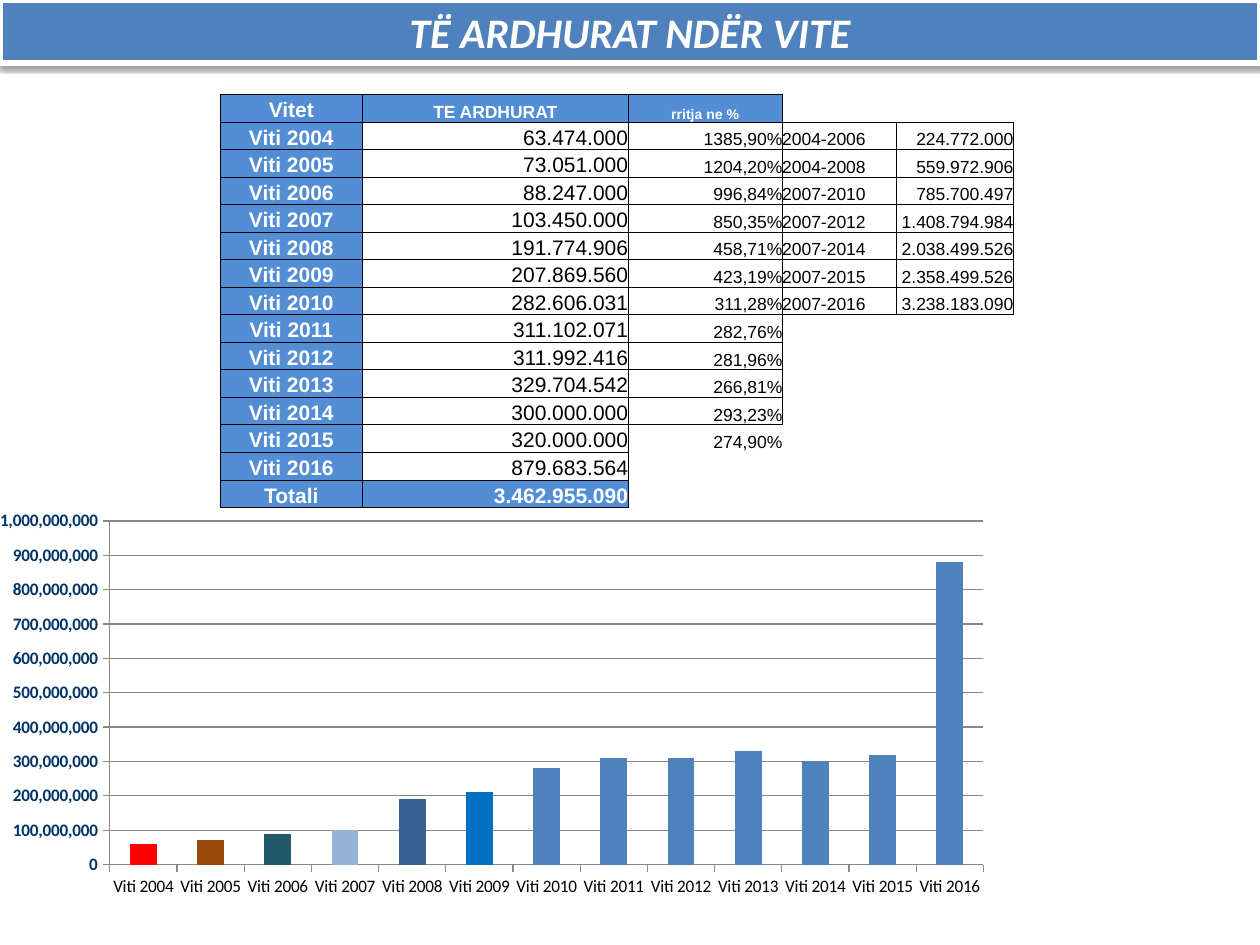
import dataclasses

import lxml.etree
import pptx
import pptx.chart.data
import pptx.dml.color
import pptx.enum.chart
import pptx.enum.text
import pptx.oxml
import pptx.oxml.ns
import pptx.util

Pt = pptx.util.Pt
ALIGN = pptx.enum.text.PP_ALIGN
ANCHOR = pptx.enum.text.MSO_ANCHOR
NAMESPACES = pptx.oxml.ns.nsdecls("a")


@dataclasses.dataclass(frozen=True)
class Theme:
    white: str = "FFFFFF"
    black: str = "000000"
    banner: str = "4F81BD"
    heading: str = "538ED5"
    scale: str = "003366"
    grid: str = "878787"
    bar_colors: tuple = ("FF0000", "984807", "215968", "95B3D7", "376092", "0070C0")
    title_font: str = "Calibri"
    table_font: str = "Arial"
    title_size: int = 24
    large: int = 12
    medium: int = 10
    small: int = 8


REVENUES = {
    "Viti 2004": "63.474.000", "Viti 2005": "73.051.000", "Viti 2006": "88.247.000",
    "Viti 2007": "103.450.000", "Viti 2008": "191.774.906", "Viti 2009": "207.869.560",
    "Viti 2010": "282.606.031", "Viti 2011": "311.102.071", "Viti 2012": "311.992.416",
    "Viti 2013": "329.704.542", "Viti 2014": "300.000.000", "Viti 2015": "320.000.000",
    "Viti 2016": "879.683.564",
}
GROWTH = ["1385,90%", "1204,20%", "996,84%", "850,35%", "458,71%", "423,19%",
          "311,28%", "282,76%", "281,96%", "266,81%", "293,23%", "274,90%"]
PERIODS = [
    ("2004-2006", "224.772.000"), ("2004-2008", "559.972.906"),
    ("2007-2010", "785.700.497"), ("2007-2012", "1.408.794.984"),
    ("2007-2014", "2.038.499.526"), ("2007-2015", "2.358.499.526"),
    ("2007-2016", "3.238.183.090"),
]
UNFRAMED = "274,90%"


def table_rows():
    rows = [["Vitet", "TE ARDHURAT", "rritja ne %", "", ""]]
    for index, (year, revenue) in enumerate(REVENUES.items()):
        growth = GROWTH[index] if index < len(GROWTH) else ""
        period = PERIODS[index] if index < len(PERIODS) else ("", "")
        rows.append([year, revenue, growth, *period])
    return rows + [["Totali", "3.462.955.090", "", "", ""]]


class SlideBuilder:
    """Holds the theme and the current slide and adds each kind of element."""

    def __init__(self, slide, theme):
        self.slide = slide
        self.theme = theme

    def color(self, value):
        return pptx.dml.color.RGBColor.from_string(value)

    def style(self, font, name, size, color, bold=False, italic=False):
        font.name, font.size = name, Pt(size)
        font.bold, font.italic = bold, italic
        font.color.rgb = self.color(color)

    def title(self, text, left, top, width, height):
        theme, shape = self.theme, self.slide.shapes.title
        shape.left, shape.top, shape.width, shape.height = map(Pt, (left, top, width, height))
        shape.fill.solid()
        shape.fill.fore_color.rgb = self.color(theme.banner)
        shape.line.color.rgb = self.color(theme.white)
        shape.line.width = Pt(3)
        shape._element.spPr.append(pptx.oxml.parse_xml(
            f'<a:effectLst {NAMESPACES}><a:outerShdw blurRad="{Pt(3.1)}" dist="{Pt(1.6)}" '
            f'dir="5400000" rotWithShape="0"><a:srgbClr val="{theme.black}">'
            '<a:alpha val="38000"/></a:srgbClr></a:outerShdw></a:effectLst>'))
        frame = shape.text_frame
        frame.text = text
        frame.auto_size = pptx.enum.text.MSO_AUTO_SIZE.NONE
        frame.vertical_anchor = ANCHOR.MIDDLE
        paragraph = frame.paragraphs[0]
        paragraph.alignment = ALIGN.CENTER
        self.style(paragraph.font, theme.title_font, theme.title_size, theme.white, True, True)

    def cell(self, cell, text, size, color, bold, alignment, fill, edges):
        cell.margin_left = cell.margin_right = cell.margin_top = cell.margin_bottom = 0
        cell.vertical_anchor = ANCHOR.BOTTOM
        cell.text = text
        paragraph = cell.text_frame.paragraphs[0]
        paragraph.alignment = alignment
        self.style(paragraph.font, self.theme.table_font, size, color, bold)
        if not text:
            ending = lxml.etree.SubElement(paragraph._p, pptx.oxml.ns.qn("a:endParaRPr"))
            ending.set("sz", str(size * 100))
        if fill:
            cell.fill.solid()
            cell.fill.fore_color.rgb = self.color(fill)
        else:
            cell.fill.background()
        properties = cell._tc.get_or_add_tcPr()
        for position, (side, drawn) in enumerate(edges.items()):
            paint = (f'<a:solidFill><a:srgbClr val="{self.theme.black}"/></a:solidFill>'
                     if drawn else "<a:noFill/>")
            properties.insert(position, pptx.oxml.parse_xml(
                f'<a:ln{side} {NAMESPACES} w="{Pt(0.5)}">{paint}</a:ln{side}>'))

    def table(self, rows, left, top, widths, row_height):
        theme, last = self.theme, len(rows) - 1
        table = self.slide.shapes.add_table(
            len(rows), len(widths), Pt(left), Pt(top),
            Pt(sum(widths)), Pt(row_height * len(rows))).table
        table.first_row = table.horz_banding = False
        for column, width in zip(table.columns, widths):
            column.width = Pt(width)

        def framed(row, column):
            inside = 0 <= row <= last and 0 <= column < len(widths)
            return inside and rows[row][column] not in ("", UNFRAMED)

        header_sizes = (theme.large, theme.medium, theme.small, theme.small, theme.small)
        alignments = (ALIGN.CENTER, ALIGN.RIGHT, ALIGN.RIGHT, ALIGN.LEFT, ALIGN.RIGHT)
        for row, texts in enumerate(rows):
            table.rows[row].height = Pt(row_height)
            for column, text in enumerate(texts):
                heading = bool(text) and (row in (0, last) or column == 0)
                body_size = theme.large if column < 2 else theme.medium
                neighbors = {"L": (row, column - 1), "R": (row, column + 1),
                             "T": (row - 1, column), "B": (row + 1, column)}
                edges = {side: framed(row, column) or framed(*place)
                         for side, place in neighbors.items()}
                self.cell(table.cell(row, column), text,
                          header_sizes[column] if row == 0 else body_size,
                          theme.white if heading else theme.black, heading,
                          ALIGN.CENTER if row == 0 else alignments[column],
                          theme.heading if heading else None, edges)

    def chart(self, values, left, top, width, height, plot_layout):
        theme = self.theme
        data = pptx.chart.data.CategoryChartData(number_format="#,##0")
        data.categories = list(values)
        data.add_series("Series 1", list(values.values()))
        chart = self.slide.shapes.add_chart(
            pptx.enum.chart.XL_CHART_TYPE.COLUMN_STACKED,
            *map(Pt, (left, top, width, height)), data).chart
        chart.has_legend = chart.has_title = False
        self.style(chart.font, theme.title_font, theme.medium, theme.black)
        plot = chart.plots[0]
        plot.gap_width, plot.overlap, plot.vary_by_categories = 150, 100, False
        series = plot.series[0]
        fills = [series.format.fill]
        fills += [series.points[index].format.fill for index in range(len(theme.bar_colors))]
        for fill, color in zip(fills, (theme.banner, *theme.bar_colors)):
            fill.solid()
            fill.fore_color.rgb = self.color(color)
        category_axis, value_axis = chart.category_axis, chart.value_axis
        category_axis.tick_label_position = pptx.enum.chart.XL_TICK_LABEL_POSITION.LOW
        value_axis.minimum_scale, value_axis.maximum_scale = 0, 1_000_000_000
        value_axis.major_unit = 100_000_000
        value_axis.has_major_gridlines = True
        value_axis.tick_labels.number_format = "#,##0"
        value_axis.tick_labels.number_format_is_linked = False
        self.style(category_axis.tick_labels.font, theme.title_font, theme.medium, theme.black)
        self.style(value_axis.tick_labels.font, theme.title_font, theme.medium, theme.scale, True)
        for axis in (category_axis, value_axis):
            axis.major_tick_mark = pptx.enum.chart.XL_TICK_MARK.OUTSIDE
        for element in (category_axis, value_axis, value_axis.major_gridlines):
            element.format.line.color.rgb = self.color(theme.grid)
            element.format.line.width = Pt(0.75)
        plot_area = chart._chartSpace.chart.plotArea
        for layout in plot_area.findall(pptx.oxml.ns.qn("c:layout")):
            plot_area.remove(layout)
        sizes = "".join(f'<c:{name} val="{value}"/>' for name, value in zip("xywh", plot_layout))
        plot_area.insert(0, pptx.oxml.parse_xml(
            f'<c:layout {pptx.oxml.ns.nsdecls("c")}><c:manualLayout>'
            '<c:layoutTarget val="inner"/><c:xMode val="edge"/><c:yMode val="edge"/>'
            f'{sizes}</c:manualLayout></c:layout>'))


def main():
    presentation = pptx.Presentation()
    presentation.slide_width, presentation.slide_height = Pt(720), Pt(540)
    slide = presentation.slides.add_slide(presentation.slide_layouts[5])
    builder = SlideBuilder(slide, Theme())
    builder.title("TË ARDHURAT NDËR VITE", 0, 0, 720, 36)
    revenues = {year: round(int(text.replace(".", "")), -7) for year, text in REVENUES.items()}
    builder.chart(revenues, 0, 288.5, 579, 231, (0.09, 0.04, 0.88, 0.85))
    builder.table(table_rows(), 126, 54, (81, 152, 88, 65, 67), 15.74)
    presentation.save("out.pptx")


if __name__ == "__main__":
    main()
